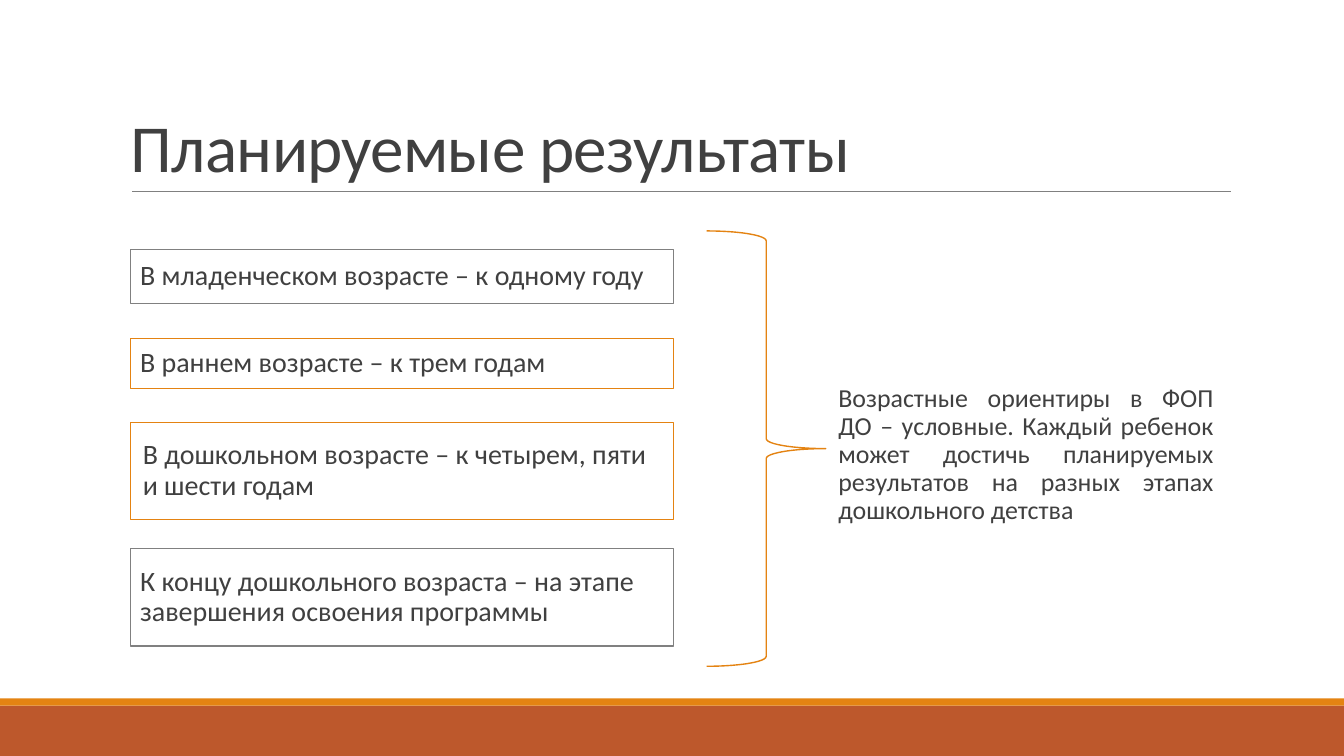
"""Build a slide listing the planned results by age, joined by a brace to a remark."""
from typing import NamedTuple, Optional

from lxml.etree import SubElement
from pptx import Presentation
from pptx.dml.color import RGBColor
from pptx.enum.shapes import MSO_CONNECTOR, MSO_SHAPE
from pptx.enum.text import MSO_ANCHOR, PP_ALIGN
from pptx.oxml.ns import qn
from pptx.shapes.autoshape import Shape
from pptx.slide import Slide
from pptx.util import Cm, Pt

FONT = "Calibri"
TEXT_COLOR = "404040"
ORANGE = "E48312"
RUST = "BD582C"
GRAY = "808080"
WHITE = "FFFFFF"
SLIDE_WIDTH = 33.87
SLIDE_HEIGHT = 19.05
BOX_LEFT = 3.28
BOX_WIDTH = 13.69


class AgeBox(NamedTuple):
    text: str
    top: float
    height: float
    line: str
    indent: float = 0.25


class Band(NamedTuple):
    top: float
    height: float
    fill: str


AGE_BOXES = (
    AgeBox("В младенческом возрасте – к одному году", 6.3, 1.35, GRAY),
    AgeBox("В раннем возрасте – к трем годам", 8.53, 1.27, ORANGE),
    AgeBox("В дошкольном возрасте – к четырем, пяти\vи шести годам", 10.64, 2.46, ORANGE, 0.32),
    AgeBox("К концу дошкольного возраста – на этапе завершения освоения программы", 13.82, 2.46, GRAY),
)
BANDS = (Band(17.78, 1.27, RUST), Band(17.6, 0.18, ORANGE))
REMARK = (
    "Возрастные ориентиры в ФОП\vДО – условные. Каждый ребенок может достичь "
    "планируемых результатов на разных этапах дошкольного детства"
)


def color(value: str) -> RGBColor:
    """Turn a hex string into a colour."""
    return RGBColor.from_string(value)


def add_outline(slide: Slide, kind: MSO_SHAPE, left: float, top: float, width: float,
                height: float, line: Optional[str], line_width: float = 0.75,
                fill: Optional[str] = None) -> Shape:
    """Add a preset shape without a shadow."""
    shape = slide.shapes.add_shape(kind, Cm(left), Cm(top), Cm(width), Cm(height))
    shape.shadow.inherit = False
    if fill:
        shape.fill.solid()
        shape.fill.fore_color.rgb = color(fill)
    else:
        shape.fill.background()
    if line:
        shape.line.color.rgb = color(line)
        shape.line.width = Pt(line_width)
    else:
        shape.line.fill.background()
    return shape


def write_text(shape: Shape, text: str, size: float, indent: float = 0,
               alignment: PP_ALIGN = PP_ALIGN.LEFT) -> None:
    """Write one vertically centred paragraph into a box."""
    frame = shape.text_frame
    frame.word_wrap = True
    frame.vertical_anchor = MSO_ANCHOR.MIDDLE
    frame.margin_left, frame.margin_right = Cm(indent), 0
    frame.margin_top = frame.margin_bottom = Cm(0.13)
    paragraph = frame.paragraphs[0]
    paragraph.text = text
    paragraph.alignment = alignment
    paragraph.line_spacing = 0.9
    paragraph.space_before, paragraph.space_after = Pt(12), Pt(2)
    paragraph.font.name = FONT
    paragraph.font.size = Pt(size)
    paragraph.font.color.rgb = color(TEXT_COLOR)


def add_title(slide: Slide, text: str) -> None:
    """Add the title and the thin rule below it."""
    frame = slide.shapes.add_textbox(Cm(3.05), Cm(0.79), Cm(27.94), Cm(4.04)).text_frame
    frame.word_wrap = True
    frame.vertical_anchor = MSO_ANCHOR.BOTTOM
    paragraph = frame.paragraphs[0]
    paragraph.line_spacing = 0.85
    paragraph.font.name = FONT
    paragraph.font.size = Pt(48)
    paragraph.font.color.rgb = color(TEXT_COLOR)
    run = paragraph.add_run()
    run.text = text
    run.font._element.set("spc", "-50")
    rule = slide.shapes.add_connector(MSO_CONNECTOR.STRAIGHT, Cm(3.33), Cm(4.82), Cm(31.01), Cm(4.82))
    rule.line.color.rgb = color(GRAY)
    rule.line.width = Pt(0.5)
    SubElement(rule._element.spPr, qn("a:effectLst"))


def main() -> None:
    """Create the presentation and save it."""
    presentation = Presentation()
    presentation.slide_width = Cm(SLIDE_WIDTH)
    presentation.slide_height = Cm(SLIDE_HEIGHT)
    slide = presentation.slides.add_slide(presentation.slide_layouts[6])
    for band in BANDS:
        add_outline(slide, MSO_SHAPE.RECTANGLE, 0, band.top, SLIDE_WIDTH, band.height, None, fill=band.fill)
    add_title(slide, "Планируемые результаты")
    for box in AGE_BOXES:
        shape = add_outline(slide, MSO_SHAPE.RECTANGLE, BOX_LEFT, box.top, BOX_WIDTH, box.height, box.line)
        write_text(shape, box.text, 20, box.indent)
    add_outline(slide, MSO_SHAPE.RIGHT_BRACE, 17.81, 5.82, 3.0, 10.97, ORANGE, 1)
    remark = add_outline(slide, MSO_SHAPE.RECTANGLE, 21.13, 9.35, 9.45, 4.22, WHITE)
    write_text(remark, REMARK, 18.5, alignment=PP_ALIGN.JUSTIFY)
    presentation.save("out.pptx")


if __name__ == "__main__":
    main()
